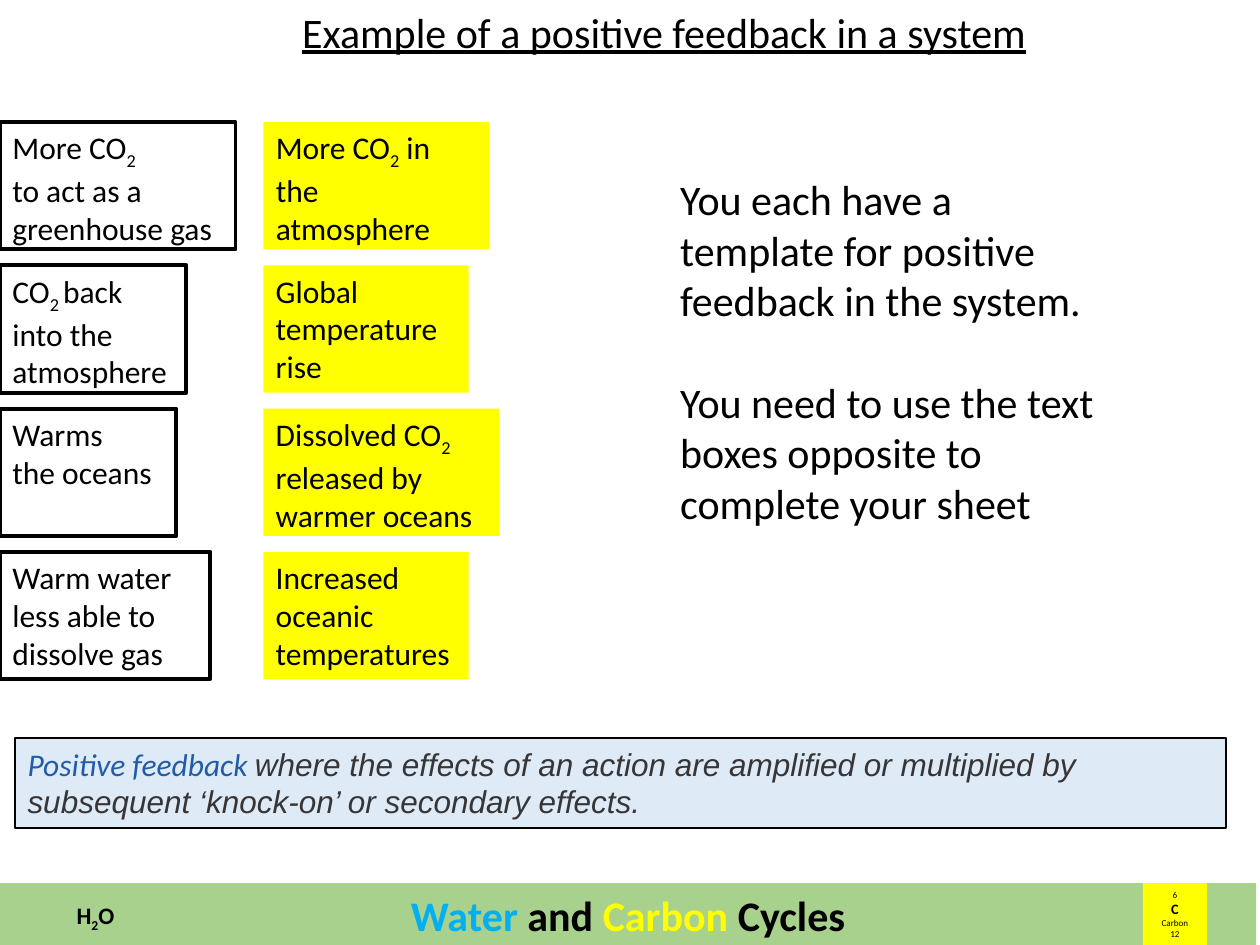
from dataclasses import dataclass

import pptx
import pptx.dml.color
import pptx.enum.shapes
import pptx.enum.text
import pptx.util

Inches = pptx.util.Inches


@dataclass(frozen=True)
class Theme:
    body_font: str = "Calibri"
    definition_font: str = "Arial"
    heading_size: float = 24
    card_size: float = 18
    formula_size: float = 13.5
    symbol_size: float = 8.2
    tiny_size: float = 5.2
    black: str = "000000"
    white: str = "FFFFFF"
    yellow: str = "FFFF00"
    band_green: str = "A9D18E"
    water_blue: str = "00B0F0"
    panel_blue: str = "DEEBF7"
    term_blue: str = "225CA8"
    definition_grey: str = "373536"


class Page:
    """Draws elements on one slide in a shared style."""

    def __init__(self, slide, theme):
        self.slide = slide
        self.theme = theme

    def box(self, left, top, width, height, fill, line=None, line_width=0):
        shape = self.slide.shapes.add_shape(
            pptx.enum.shapes.MSO_SHAPE.RECTANGLE,
            Inches(left), Inches(top), Inches(width), Inches(height))
        shape.shadow.inherit = False
        shape.fill.solid()
        shape.fill.fore_color.rgb = self.color(fill)
        if line:
            shape.line.color.rgb = self.color(line)
            shape.line.width = pptx.util.Pt(line_width)
        else:
            shape.line.fill.background()
        return self.prepare(shape)

    def label(self, left, top, width, height, wrap=True):
        shape = self.slide.shapes.add_textbox(
            Inches(left), Inches(top), Inches(width), Inches(height))
        return self.prepare(shape, wrap)

    def prepare(self, shape, wrap=True):
        frame = shape.text_frame
        frame.word_wrap = wrap
        frame.vertical_anchor = pptx.enum.text.MSO_ANCHOR.TOP
        return frame

    def para(self, frame, text, size, center=False, gap=0, **style):
        """Add a paragraph; text between tildes is set as subscript."""
        first = frame.paragraphs[0]
        para = first if not first.runs else frame.add_paragraph()
        align = pptx.enum.text.PP_ALIGN
        para.alignment = align.CENTER if center else align.LEFT
        if gap:
            para.space_before = pptx.util.Pt(gap)
        self.style(para.font, size=size, **{
            "name": self.theme.body_font, "color": self.theme.black, **style})
        for index, part in enumerate(text.split("~")):
            if part:
                span = self.span(para, part)
                if index % 2:
                    span._r.get_or_add_rPr().set("baseline", "-25000")
        return para

    def span(self, para, text, **style):
        span = para.add_run()
        span.text = text
        # Shape text is white by default, so each run carries its colour
        style.setdefault("color", str(para.font.color.rgb))
        self.style(span.font, **style)
        return span

    def style(self, font, size=None, color=None, **flags):
        if size:
            font.size = pptx.util.Pt(size)
        if color:
            font.color.rgb = self.color(color)
        for name, value in flags.items():
            setattr(font, name, value)

    @staticmethod
    def color(value):
        return pptx.dml.color.RGBColor.from_string(value)


def draw_footer(page):
    theme = page.theme
    band = page.box(0, 7.01, 9.97, 0.5, theme.band_green)
    para = page.para(band, "", theme.heading_size, center=True, bold=True)
    for text, color in (("Water", theme.water_blue), (" and ", theme.black),
                        ("Carbon", theme.yellow), (" Cycles", theme.black)):
        page.span(para, text, color=color)

    # Carbon element tile
    tile = page.box(9.07, 7.01, 0.51, 0.5, theme.yellow)
    for text in ("6", "C", "Carbon", "12"):
        symbol = text == "C"
        size = theme.symbol_size if symbol else theme.tiny_size
        page.para(tile, text, size, center=True, bold=symbol)

    # Water formula
    formula = page.label(0.51, 7.1, 0.52, 0.33)
    page.para(formula, "H~2~O", theme.formula_size, bold=True)


def draw_cards(page):
    theme = page.theme
    first_top, last_top, height = 0.97, 4.38, 1.01
    outlined = (
        (1.87, ("More CO~2~", "to act as a", "greenhouse gas")),
        (1.48, ("CO~2 ~back", "into the", "atmosphere")),
        (1.4, ("Warms", "the oceans")),
        (1.67, ("Warm water", "less able to", "dissolve gas")),
    )
    highlighted = (
        (1.79, ("More CO~2~ in", "the atmosphere")),
        (1.63, ("Global", "temperature", "rise")),
        (1.87, ("Dissolved CO~2~", "released by", "warmer oceans")),
        (1.63, ("Increased", "oceanic", "temperatures")),
    )
    columns = ((0, theme.white, theme.black, outlined),
               (2.09, theme.yellow, None, highlighted))
    for left, fill, line, cards in columns:
        pitch = (last_top - first_top) / (len(cards) - 1)
        for row, (width, lines) in enumerate(cards):
            card = page.box(left, first_top + row * pitch, width, height,
                            fill, line, 2.25)
            for text in lines:
                page.para(card, text, theme.card_size)


def draw_texts(page):
    theme = page.theme
    # Title
    title = page.label(2.3, 0, 6, 0.5, wrap=False)
    page.para(title, "Example of a positive feedback in a system",
              theme.heading_size, underline=True)

    # Task instructions, one line apart
    task = page.label(5.3, 1.33, 3.62, 2.93)
    page.para(task, "You each have a template for positive feedback "
              "in the system.", theme.heading_size)
    page.para(task, "You need to use the text boxes opposite to complete "
              "your sheet", theme.heading_size, gap=29.3)

    # Definition panel
    panel = page.box(0.12, 5.86, 9.61, 0.71, theme.panel_blue, theme.black, 1)
    para = page.para(panel, "", theme.card_size, italic=True)
    page.span(para, "Positive feedback ", color=theme.term_blue)
    page.span(para, "where the effects of an action are amplified or "
              "multiplied by subsequent ‘knock-on’ or secondary effects.",
              color=theme.definition_grey, name=theme.definition_font)


def main():
    deck = pptx.Presentation()
    deck.slide_width, deck.slide_height = Inches(10), Inches(7.5)
    page = Page(deck.slides.add_slide(deck.slide_layouts[6]), Theme())
    draw_footer(page)
    draw_cards(page)
    draw_texts(page)
    deck.save("out.pptx")


if __name__ == "__main__":
    main()
